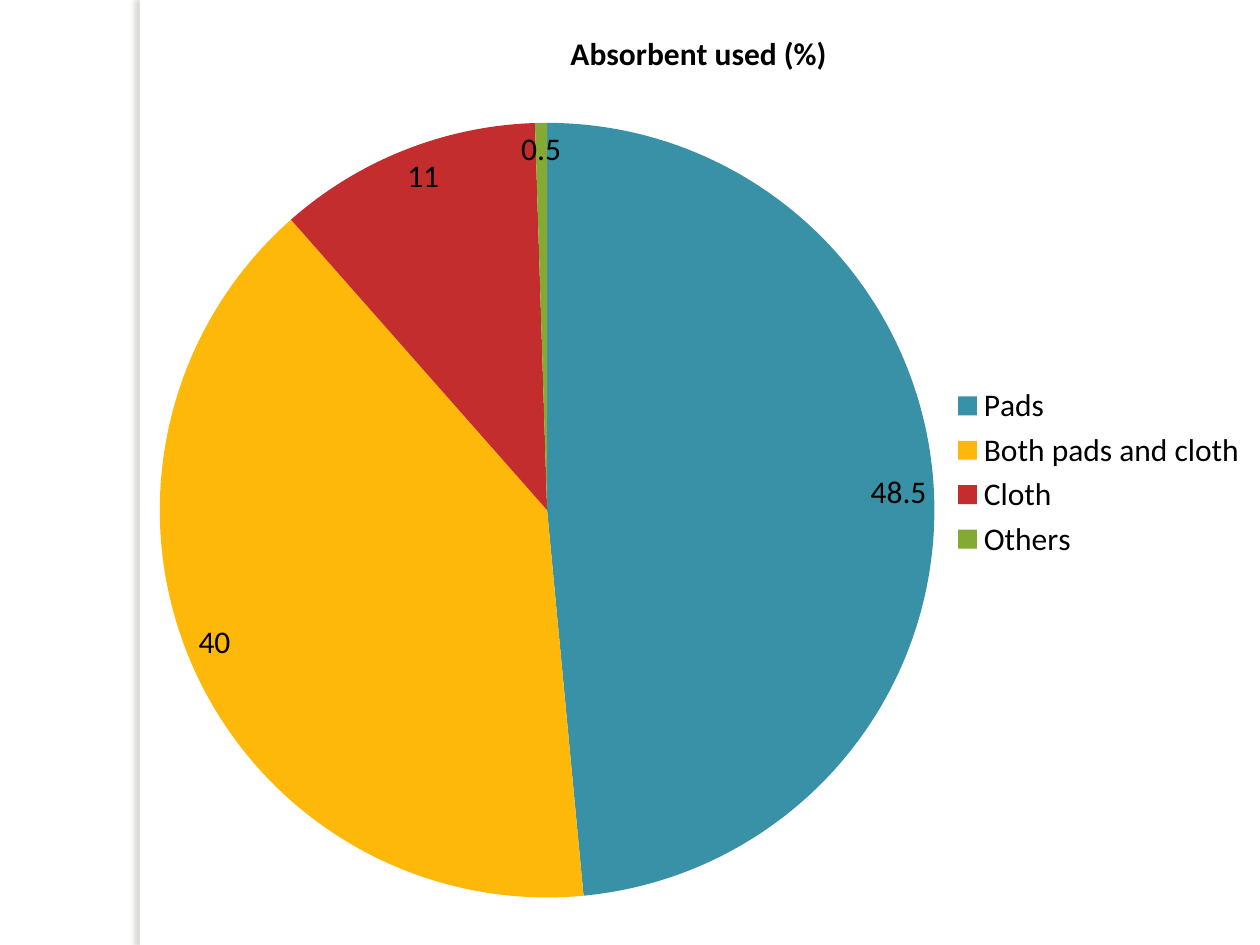
from dataclasses import dataclass
from typing import NamedTuple

from lxml.etree import SubElement
from pptx import Presentation
from pptx.chart.data import CategoryChartData as Data
from pptx.dml.color import RGBColor as RGB
from pptx.enum.chart import XL_CHART_TYPE as Kind
from pptx.enum.chart import XL_LABEL_POSITION as Spot
from pptx.enum.chart import XL_LEGEND_POSITION as Side
from pptx.enum.shapes import MSO_SHAPE as Form
from pptx.oxml import parse_xml
from pptx.oxml.ns import nsdecls, qn
from pptx.util import Inches, Pt


@dataclass(frozen=True)
class Theme:
    font: str = "Calibri"
    text: str = "000000"
    paper: str = "FFFFFF"
    shade: str = "736F63"
    base: int = 10
    large: int = 18


class Slice(NamedTuple):
    name: str
    value: float
    color: str


THEME = Theme()
SLICES = [
    Slice("Pads", 48.5, "3891A7"),
    Slice("Both pads and cloth", 40, "FEB80A"),
    Slice("Cloth", 11, "C32D2E"),
    Slice("Others", 0.5, "84AA33"),
]
PLOT = {"x": 0.02, "y": 0.13, "w": 0.69, "h": 0.82}


def style(font, size: int = THEME.large, bold: bool = False) -> None:
    font.name = THEME.font
    font.size = Pt(size)
    font.bold = bold
    font.color.rgb = RGB.from_string(THEME.text)


def write(frame, text: str, **form) -> None:
    """Put text in a frame and format it."""
    run = frame.paragraphs[0].add_run()
    run.text = text
    style(run.font, **form)


def add_strip(slide) -> None:
    """Draw the white strip that casts a soft shadow to the left."""
    strip = slide.shapes.add_shape(
        Form.RECTANGLE, Inches(1.11), 0, Inches(0.08), Inches(7.5))
    strip.fill.solid()
    strip.fill.fore_color.rgb = RGB.from_string(THEME.paper)
    strip.line.fill.background()
    strip.shadow.inherit = False
    effects = strip.element.spPr.find(qn("a:effectLst"))
    effects.append(parse_xml(
        f'<a:outerShdw {nsdecls("a")} blurRad="{Pt(3)}" dist="{Pt(3)}" '
        f'dir="10800000" algn="tl" rotWithShape="0">'
        f'<a:srgbClr val="{THEME.shade}"><a:alpha val="25000"/></a:srgbClr>'
        f'</a:outerShdw>'))


def place_plot(chart) -> None:
    """Fix the pie's place as fractions of the chart area."""
    area = chart.plots[0]._element.getparent()
    layout = area.find(qn("c:layout"))
    if layout is None:
        layout = SubElement(area, qn("c:layout"))
        area.insert(0, layout)
    manual = SubElement(layout, qn("c:manualLayout"))
    rules = {"layoutTarget": "inner", "xMode": "edge", "yMode": "edge"} | PLOT
    for tag, value in rules.items():
        SubElement(manual, qn(f"c:{tag}")).set("val", str(value))


def add_pie(slide) -> None:
    data = Data(number_format="General")
    data.categories = [part.name for part in SLICES]
    data.add_series("Series 1", [part.value for part in SLICES])
    chart = slide.shapes.add_chart(
        Kind.PIE, Inches(1.09), 0, Inches(8.91), Inches(7.5), data).chart
    style(chart.font, size=THEME.base)
    chart.has_title = True
    write(chart.chart_title.text_frame, "Absorbent used (%)", bold=True)
    chart.chart_title.include_in_layout = False
    chart.has_legend = True
    chart.legend.position = Side.RIGHT
    chart.legend.include_in_layout = False
    style(chart.legend.font)

    plot = chart.plots[0]
    plot.vary_by_categories = True
    plot.has_data_labels = True
    labels = plot.data_labels
    labels.show_value = True
    labels.show_percentage = False
    labels.position = Spot.INSIDE_END
    style(labels.font)
    for i, part in enumerate(SLICES):
        fill = plot.series[0].points[i].format.fill
        fill.solid()
        fill.fore_color.rgb = RGB.from_string(part.color)
    place_plot(chart)


def main() -> None:
    deck = Presentation()
    deck.slide_width, deck.slide_height = Inches(10), Inches(7.5)
    slide = deck.slides.add_slide(deck.slide_layouts[6])
    slide.background.fill.solid()
    slide.background.fill.fore_color.rgb = RGB.from_string(THEME.paper)
    add_strip(slide)
    add_pie(slide)
    deck.save("out.pptx")


if __name__ == "__main__":
    main()
